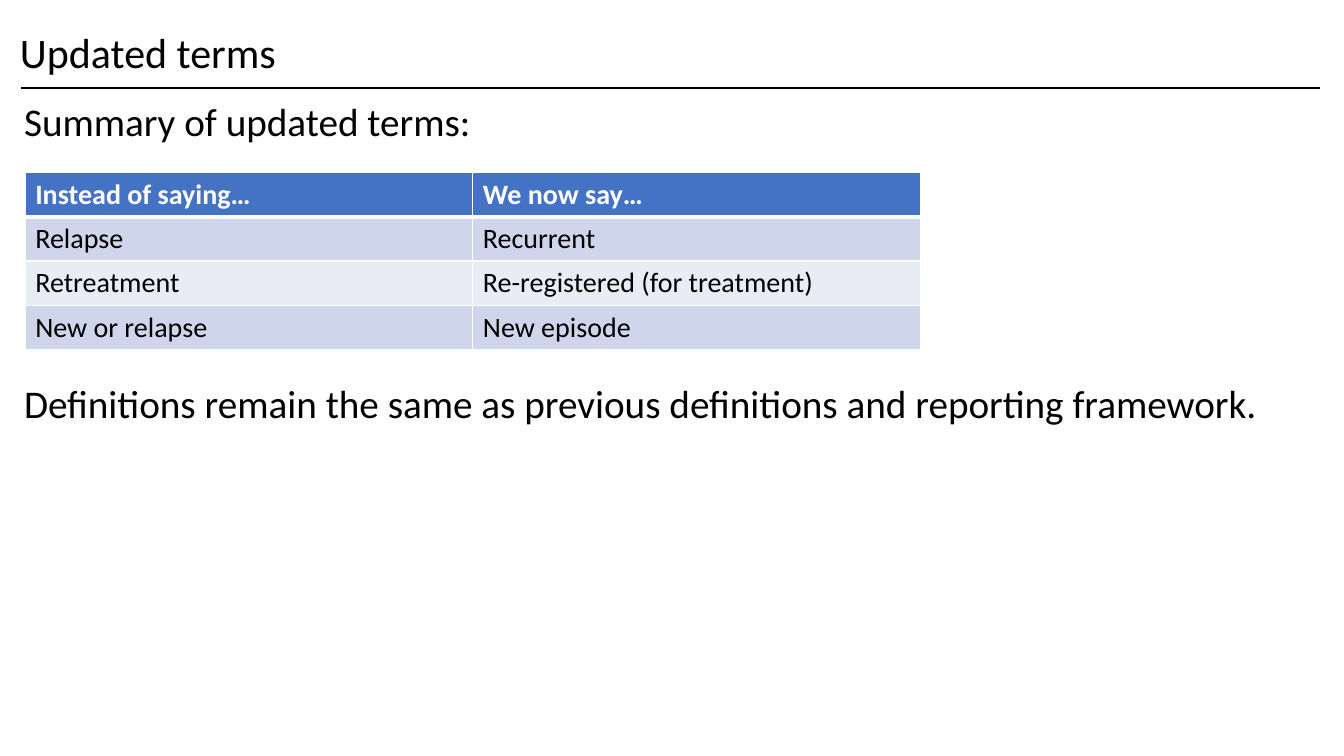
"""Build the slide that summarises the updated terms."""
from dataclasses import dataclass

from lxml.etree import SubElement
from pptx import Presentation
from pptx.dml.color import RGBColor as RGB
from pptx.enum.shapes import MSO_CONNECTOR as Conn
from pptx.enum.text import MSO_ANCHOR as Anchor
from pptx.oxml.ns import qn
from pptx.util import Inches, Pt

TITLE = "Updated terms"
INTRO = "Summary of updated terms:"
CLOSING = "Definitions remain the same as previous definitions and reporting framework."
TERMS = [
    ("Instead of saying…", "We now say…"),
    ("Relapse", "Recurrent"),
    ("Retreatment", "Re-registered (for treatment)"),
    ("New or relapse", "New episode"),
]


@dataclass(frozen=True)
class Theme:
    font: str = "Calibri"
    ink: str = "000000"
    paper: str = "FFFFFF"
    header: str = "4472C4"
    bands: tuple = ("CFD5EA", "E9EBF5")
    title_pt: int = 30
    body_pt: int = 28
    table_pt: int = 20


THEME = Theme()
WIDTH, HEIGHT = 13.33, 7.5
TITLE_BOX = (0.1, 0.12, 13.1, 0.85)
BODY_BOX = (0.14, 0.97, 13.06, 5.78)
RULE_LEFT, RULE_RIGHT, RULE_Y = 0.21, 13.09, 0.87
TABLE_LEFT, TABLE_TOP = 0.25, 1.71
COL_WIDTH, ROW_HEIGHT = 4.44, 0.44
TABLE_GAP_PT = 171


def style(p, size, color=THEME.ink, bold=False):
    p.font.name = THEME.font
    p.font.size = Pt(size)
    p.font.bold = bold
    p.font.color.rgb = RGB.from_string(color)


def add_text(slide, box, lines, size, anchor=Anchor.TOP, gap=0):
    tf = slide.shapes.add_textbox(*map(Inches, box)).text_frame
    tf.word_wrap = True
    tf.vertical_anchor = anchor
    tf.text = "\n".join(lines)
    for i, p in enumerate(tf.paragraphs):
        style(p, size)
        p.line_spacing = 0.9
        p.space_before = Pt(gap if i else 0)


def add_rule(slide):
    ends = map(Inches, (RULE_LEFT, RULE_Y, RULE_RIGHT, RULE_Y))
    line = slide.shapes.add_connector(Conn.STRAIGHT, *ends)
    line.line.color.rgb = RGB.from_string(THEME.ink)
    line.line.width = Pt(1.5)
    SubElement(line._element.spPr, qn("a:effectLst"))


def set_borders(cell, widths):
    tc_pr = cell._tc.get_or_add_tcPr()
    for i, (side, width) in enumerate(widths.items()):
        ln = tc_pr.makeelement(qn(f"a:ln{side}"), {"w": str(Pt(width))})
        fill = SubElement(ln, qn("a:solidFill"))
        SubElement(fill, qn("a:srgbClr"), val=THEME.paper)
        tc_pr.insert(i, ln)


def add_terms(slide):
    rows, cols = len(TERMS), len(TERMS[0])
    size = (cols * COL_WIDTH, rows * ROW_HEIGHT)
    frame = map(Inches, (TABLE_LEFT, TABLE_TOP, *size))
    table = slide.shapes.add_table(rows, cols, *frame).table
    for r, row in enumerate(TERMS):
        head = r == 0
        fill = THEME.header if head else THEME.bands[(r - 1) % 2]
        for c, term in enumerate(row):
            cell = table.cell(r, c)
            cell.text = term
            style(cell.text_frame.paragraphs[0], THEME.table_pt,
                  THEME.paper if head else THEME.ink, head)
            cell.fill.solid()
            cell.fill.fore_color.rgb = RGB.from_string(fill)
            set_borders(cell, {"L": 1, "R": 1, "T": 3 if r == 1 else 1,
                               "B": 3 if head else 1})


def main():
    prs = Presentation()
    prs.slide_width, prs.slide_height = Inches(WIDTH), Inches(HEIGHT)
    s = prs.slides.add_slide(prs.slide_layouts[6])
    add_text(s, TITLE_BOX, [TITLE], THEME.title_pt, Anchor.MIDDLE)
    add_rule(s)
    add_text(s, BODY_BOX, [INTRO, CLOSING], THEME.body_pt, gap=TABLE_GAP_PT)
    add_terms(s)
    prs.save("out.pptx")


if __name__ == "__main__":
    main()
